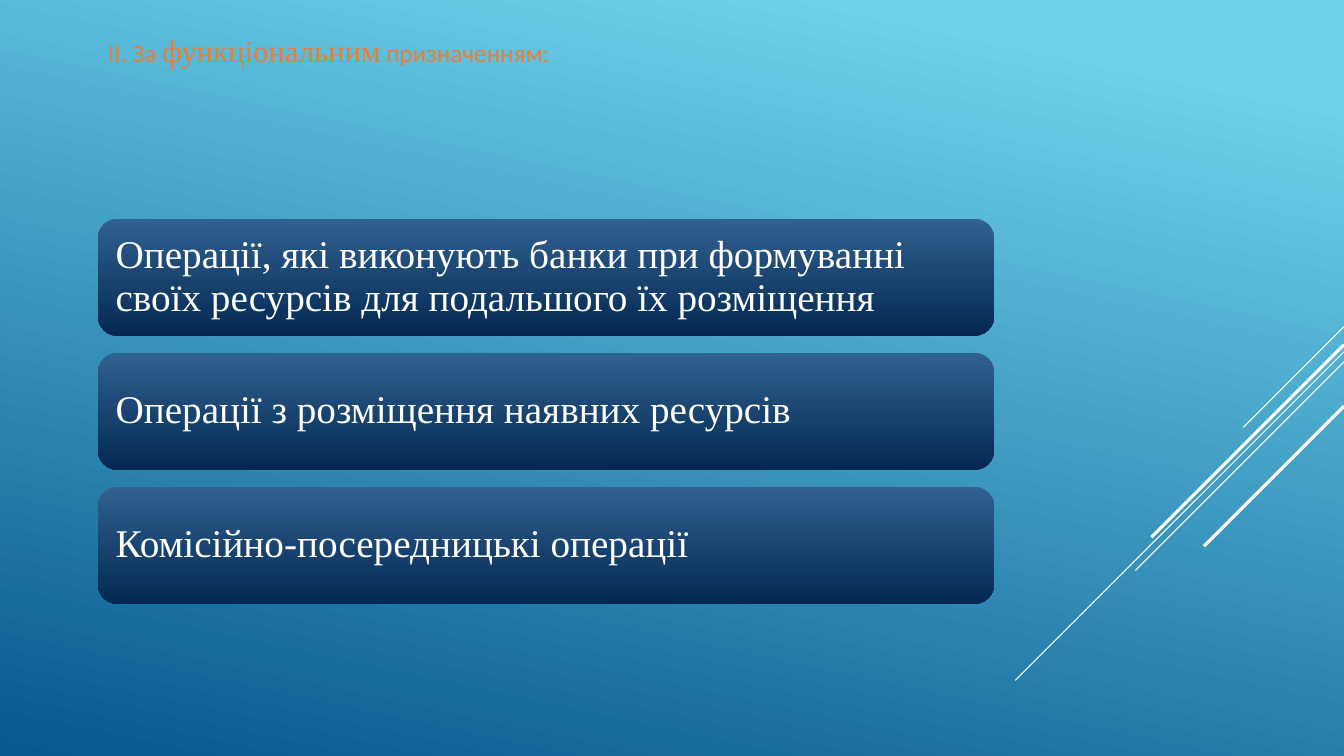
from lxml import etree
from pptx import Presentation
from pptx.dml.color import RGBColor
from pptx.enum.shapes import MSO_CONNECTOR, MSO_SHAPE
from pptx.enum.text import MSO_ANCHOR, MSO_AUTO_SIZE, PP_ALIGN
from pptx.oxml.ns import qn
from pptx.util import Inches, Pt

STRAIGHT = MSO_CONNECTOR.STRAIGHT
ROUNDED = MSO_SHAPE.ROUNDED_RECTANGLE
MIDDLE, TOP = MSO_ANCHOR.MIDDLE, MSO_ANCHOR.TOP
LEFT = PP_ALIGN.LEFT

COLORS = {
    "sky": "6ED2EB",
    "deep": "06588E",
    "card_top": "316190",
    "card_bottom": "042853",
    "title": "E87D37",
    "white": "FFFFFF",
}
SERIF, SANS = "Times New Roman", "Calibri"

TITLE = [
    ("II. За ", SANS, 18),
    ("функціональним", SERIF, 22),
    (" призначенням:", SANS, 18),
]
OPERATIONS = [
    "Операції, які виконують банки при формуванні своїх ресурсів для подальшого їх розміщення",
    "Операції з розміщення наявних ресурсів",
    "Комісійно-посередницькі операції",
]
# Diagonals from the right edge: start height, horizontal run, width in points
DIAGONALS = [
    (3.24, 1.0, 0.75),
    (3.49, 3.26, 0.75),
    (3.59, 2.07, 0.75),
    (3.42, 1.91, 2.25),
    (4.03, 1.39, 2.25),
]

SLIDE_W, SLIDE_H = 13.33, 7.5
MARGIN = 0.97
CARD_TOP, CARD_W, CARD_H, CARD_PITCH = 2.17, 8.89, 1.16, 1.33


def rgb(name):
    return RGBColor.from_string(COLORS[name])


def set_gradient(fill, first, last, angle, start=0):
    """Two-stop gradient; angle runs counter-clockwise, start is 0 to 1."""
    fill.gradient()
    fill.gradient_angle = angle
    for stop, color, position in zip(fill.gradient_stops, (first, last), (start, 1)):
        stop.color.rgb = rgb(color)
        stop.position = position


def write(tf, runs, color, anchor=TOP, wrap=True, inset=None, spacing=None):
    """Fill a text frame with one paragraph of (text, font, size) runs."""
    tf.word_wrap = wrap
    tf.vertical_anchor = anchor
    if inset is not None:
        tf.margin_left = tf.margin_right = Inches(inset)
        tf.margin_top = tf.margin_bottom = Inches(inset)
    p = tf.paragraphs[0]
    p.alignment = LEFT
    if spacing:
        p.line_spacing = spacing
    for text, font, size in runs:
        r = p.add_run()
        r.text = text
        r.font.name = font
        r.font.size = Pt(size)
        r.font.color.rgb = rgb(color)


def add_diagonal(s, top, run, width):
    line = s.shapes.add_connector(
        STRAIGHT, Inches(SLIDE_W), Inches(top), Inches(SLIDE_W - run), Inches(top + run))
    line.line.color.rgb = rgb("white")
    line.line.width = Pt(width)
    etree.SubElement(line._element.spPr, qn("a:effectLst"))


def add_card(s, top, text):
    card = s.shapes.add_shape(
        ROUNDED, Inches(MARGIN), Inches(top), Inches(CARD_W), Inches(CARD_H))
    card.shadow.inherit = False
    card.line.fill.background()
    set_gradient(card.fill, "card_top", "card_bottom", 270)
    write(card.text_frame, [(text, SERIF, 28)], "white",
          anchor=MIDDLE, inset=0.12, spacing=0.9)


def main():
    prs = Presentation()
    prs.slide_width, prs.slide_height = Inches(SLIDE_W), Inches(SLIDE_H)
    s = prs.slides.add_slide(prs.slide_layouts[6])
    set_gradient(s.background.fill, "sky", "deep", 258, start=0.1)

    for diagonal in DIAGONALS:
        add_diagonal(s, *diagonal)

    title = s.shapes.add_textbox(Inches(MARGIN), Inches(0.27), Inches(4.69), Inches(0.47))
    write(title.text_frame, TITLE, "title", wrap=False)
    title.text_frame.auto_size = MSO_AUTO_SIZE.SHAPE_TO_FIT_TEXT

    for i, text in enumerate(OPERATIONS):
        add_card(s, CARD_TOP + i * CARD_PITCH, text)

    prs.save("out.pptx")


if __name__ == "__main__":
    main()
